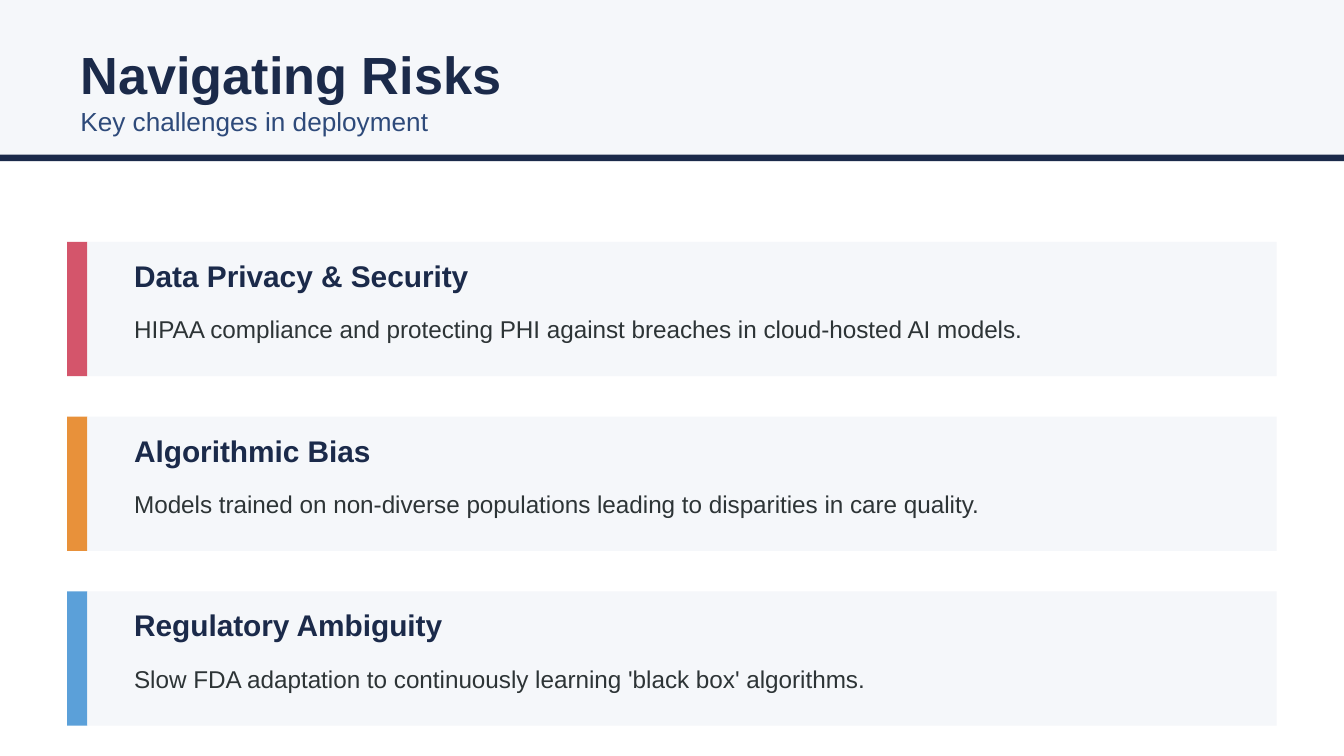
"""Build the Navigating Risks slide with three colour-marked risk cards."""
from pptx import Presentation
from pptx.dml.color import RGBColor
from pptx.enum.shapes import MSO_SHAPE
from pptx.enum.text import MSO_ANCHOR, MSO_AUTO_SIZE, PP_ALIGN
from pptx.util import Pt

RECTANGLE = MSO_SHAPE.RECTANGLE
MIDDLE = MSO_ANCHOR.MIDDLE
NO_AUTOFIT = MSO_AUTO_SIZE.NONE
LEFT = PP_ALIGN.LEFT

NAVY = RGBColor(0x1B, 0x2A, 0x4A)
BLUE = RGBColor(0x2E, 0x4A, 0x7A)
CHARCOAL = RGBColor(0x2D, 0x34, 0x36)
PALE = RGBColor(0xF5, 0xF7, 0xFA)
ROSE = RGBColor(0xD4, 0x55, 0x6B)
ORANGE = RGBColor(0xE8, 0x91, 0x3A)
SKY = RGBColor(0x5B, 0xA0, 0xD9)

SLIDE_WIDTH = 720
MARGIN = 36
CARD_TOP = 129.6
CARD_HEIGHT = 72
CARD_PITCH = 93.6
ACCENT_WIDTH = 10.8
TEXT_LEFT = 64.8
TEXT_WIDTH = 576

RISKS = [
    (ROSE, "Data Privacy & Security",
     "HIPAA compliance and protecting PHI against breaches in cloud-hosted AI models."),
    (ORANGE, "Algorithmic Bias",
     "Models trained on non-diverse populations leading to disparities in care quality."),
    (SKY, "Regulatory Ambiguity",
     "Slow FDA adaptation to continuously learning 'black box' algorithms."),
]


def add_block(left, top, width, height, color):
    shape = slide.shapes.add_shape(RECTANGLE, Pt(left), Pt(top), Pt(width), Pt(height))
    shape.shadow.inherit = False
    shape.fill.solid()
    shape.fill.fore_color.rgb = color
    shape.line.fill.background()


def write_text(shape, text, size, color, bold=False):
    text_frame = shape.text_frame
    text_frame.text = text
    text_frame.word_wrap = True
    text_frame.auto_size = NO_AUTOFIT
    text_frame.vertical_anchor = MIDDLE
    paragraph = text_frame.paragraphs[0]
    paragraph.alignment = LEFT
    font = paragraph.runs[0].font
    font.name = "Arial"
    font.size = Pt(size)
    font.bold = bold
    font.color.rgb = color


presentation = Presentation()
presentation.slide_width = Pt(SLIDE_WIDTH)
presentation.slide_height = Pt(405)
slide = presentation.slides.add_slide(presentation.slide_layouts[5])

add_block(0, 0, SLIDE_WIDTH, 86.4, PALE)
add_block(0, 82.8, SLIDE_WIDTH, 3.6, NAVY)

title = slide.shapes.title
title.element.getparent().append(title.element)
title.left, title.top = Pt(MARGIN), Pt(21.6)
title.width, title.height = Pt(SLIDE_WIDTH - 2 * MARGIN), Pt(36)
write_text(title, "Navigating Risks", 28, NAVY, bold=True)

subtitle = slide.shapes.add_textbox(
    Pt(MARGIN), Pt(54), Pt(SLIDE_WIDTH - 2 * MARGIN), Pt(21.6))
write_text(subtitle, "Key challenges in deployment", 14, BLUE)

for index, (accent, risk, description) in enumerate(RISKS):
    top = CARD_TOP + index * CARD_PITCH
    card_left = MARGIN + ACCENT_WIDTH
    add_block(MARGIN, top, ACCENT_WIDTH, CARD_HEIGHT, accent)
    add_block(card_left, top, SLIDE_WIDTH - MARGIN - card_left, CARD_HEIGHT, PALE)

    heading = slide.shapes.add_textbox(
        Pt(TEXT_LEFT), Pt(top + 7.2), Pt(TEXT_WIDTH), Pt(21.6))
    write_text(heading, risk, 16, NAVY, bold=True)

    detail = slide.shapes.add_textbox(
        Pt(TEXT_LEFT), Pt(top + 32.4), Pt(TEXT_WIDTH), Pt(28.8))
    write_text(detail, description, 13, CHARCOAL)

presentation.save("out.pptx")
